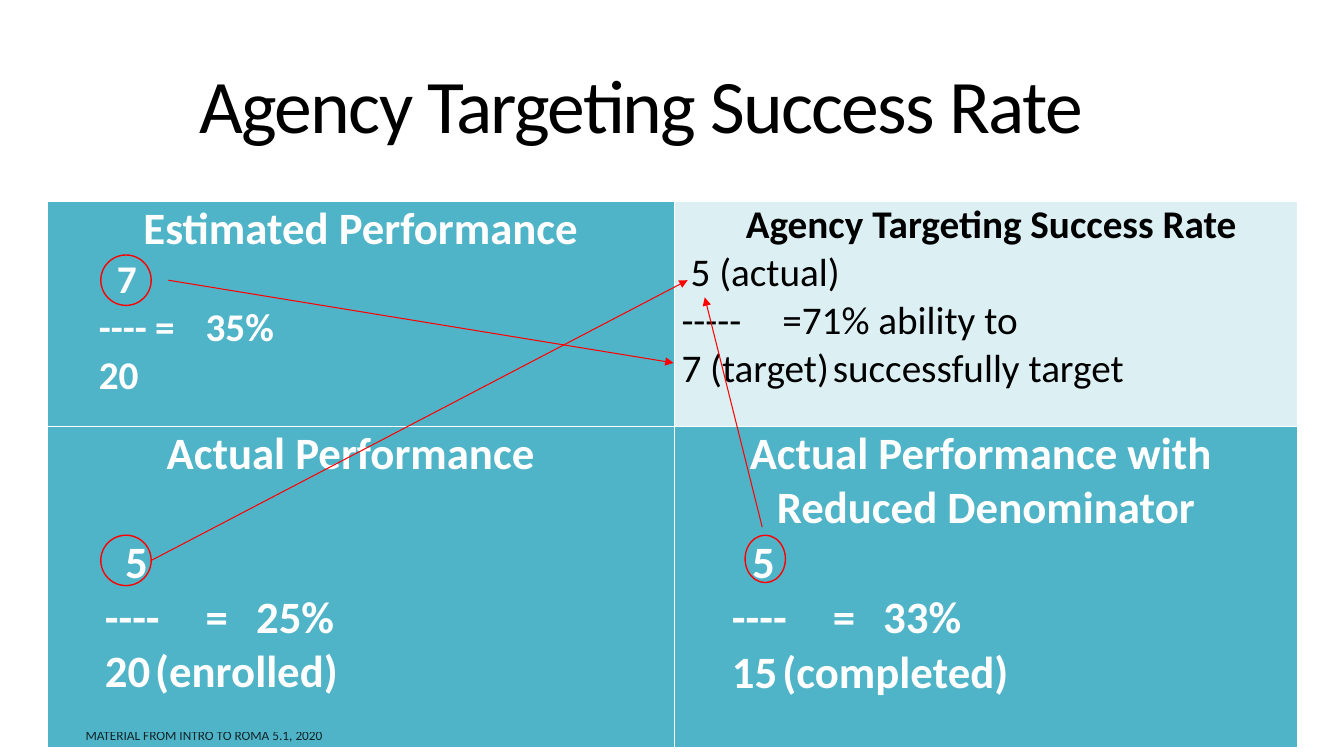
from dataclasses import dataclass
from typing import NamedTuple

from lxml.etree import SubElement
from pptx import Presentation
from pptx.dml.color import RGBColor as Rgb
from pptx.enum.shapes import MSO_CONNECTOR as Link, MSO_SHAPE as Shape
from pptx.enum.text import MSO_ANCHOR as Anchor, MSO_AUTO_SIZE as Fit, PP_ALIGN as Align
from pptx.oxml.ns import qn
from pptx.util import Pt


@dataclass(frozen=True)
class Theme:
    face: str = "Calibri"
    black: str = "000000"
    white: str = "FFFFFF"
    red: str = "FF0000"
    teal: str = "50B4C8"
    pale: str = "DCF0F4"
    title: float = 54
    large: float = 32
    mid: float = 28
    note: float = 9.5


class Box(NamedTuple):
    left: int
    top: int
    width: int
    height: int


class Line(NamedTuple):
    text: str
    size: float
    indent: int = 0
    tabs: tuple[int, ...] = ()
    bold: bool = True
    center: bool = False
    shift: int = 0
    before: float = 0


class Panel(NamedTuple):
    row: int
    col: int
    fill: str
    ink: str
    lines: list[Line]


class Arrow(NamedTuple):
    x1: int
    y1: int
    x2: int
    y2: int


THEME = Theme()
SCALE = 9144
WIDE, HIGH = 1333, 750
TITLE = Box(47, 19, 1178, 181)
TABLE = Box(47, 200, 1240, 542)
COLS = (622, 618)
ROWS = (223, 319)
NOTE = Box(75, 717, 550, 25)
BIG, MID = THEME.large, THEME.mid

PANELS = [
    Panel(0, 0, THEME.teal, THEME.white, [
        Line("Estimated Performance", BIG, center=True),
        Line("7", MID, 62),
        Line("----\t=\t35%", MID, 44, (127, 181)),
        Line("20", MID, 44),
    ]),
    Panel(0, 1, THEME.pale, THEME.black, [
        Line("Agency Targeting Success Rate", MID, center=True, shift=10),
        Line("5 (actual)", MID, 9, bold=False),
        Line("-----\t=71% ability to", MID, 0, (208,), False),
        Line("7 (target)\tsuccessfully target", MID, 0, (277,), False),
    ]),
    Panel(1, 0, THEME.teal, THEME.white, [
        Line("Actual Performance", BIG, center=True, shift=-20),
        Line("5", BIG, 70, before=39),
        Line("----\t=\t25%", BIG, 50, (145, 197)),
        Line("20\t(enrolled)", BIG, 50, (145,)),
    ]),
    Panel(1, 1, THEME.teal, THEME.white, [
        Line("Actual Performance with", BIG, center=True, shift=-10),
        Line("Reduced Denominator", BIG, center=True),
        Line("5", BIG, 70),
        Line("----\t=\t33%", BIG, 50, (145, 197)),
        Line("15\t(completed)", BIG, 50, (115,)),
    ]),
]
RINGS = [Box(100, 253, 50, 50), Box(100, 531, 50, 50), Box(739, 531, 40, 47)]
ARROWS = [
    Arrow(167, 278, 668, 360),
    Arrow(150, 556, 682, 278),
    Arrow(756, 523, 699, 295),
]


def px(n: int) -> int:
    return n * SCALE


def place(box: Box) -> list[int]:
    return [px(n) for n in box]


def style(para, size: float, ink: str, bold: bool = False) -> None:
    font = para.font
    font.name = THEME.face
    font.size = Pt(size)
    font.bold = bold
    font.color.rgb = Rgb.from_string(ink)


def write(para, line: Line, ink: str) -> None:
    para.add_run().text = line.text
    para.alignment = Align.CENTER if line.center else Align.LEFT
    if line.before:
        para.space_before = Pt(line.before)
    props = para._p.get_or_add_pPr()
    props.set("marL", str(px(max(line.shift, 0))))
    props.set("marR", str(px(max(-line.shift, 0))))
    props.set("indent", str(px(line.indent)))
    if line.tabs:
        stops = SubElement(props, qn("a:tabLst"))
        for pos in line.tabs:
            SubElement(stops, qn("a:tab"), pos=str(px(pos)), algn="l")
    style(para, line.size, ink, line.bold)


def add_title(slide) -> None:
    title = slide.shapes.title
    title.left, title.top, title.width, title.height = place(TITLE)
    frame = title.text_frame
    frame.auto_size = Fit.NONE
    frame.vertical_anchor = Anchor.MIDDLE
    para = frame.paragraphs[0]
    run = para.add_run()
    run.text = "Agency Targeting Success Rate"
    run._r.get_or_add_rPr().set("spc", "-120")
    para.alignment = Align.CENTER
    para.line_spacing = 0.85
    style(para, THEME.title, THEME.black)


def add_grid(slide) -> None:
    grid = slide.shapes.add_table(len(ROWS), len(COLS), *place(TABLE)).table
    grid.horz_banding = False
    for col, width in zip(grid.columns, COLS):
        col.width = px(width)
    for row, height in zip(grid.rows, ROWS):
        row.height = px(height)
    for panel in PANELS:
        cell = grid.cell(panel.row, panel.col)
        cell.fill.solid()
        cell.fill.fore_color.rgb = Rgb.from_string(panel.fill)
        cell.margin_left = cell.margin_right = px(7)
        cell.margin_top = cell.margin_bottom = 0
        frame = cell.text_frame
        for i, line in enumerate(panel.lines):
            para = frame.add_paragraph() if i else frame.paragraphs[0]
            write(para, line, panel.ink)


def add_ring(slide, box: Box) -> None:
    ring = slide.shapes.add_shape(Shape.FLOWCHART_CONNECTOR, *place(box))
    ring.shadow.inherit = False
    ring.fill.background()
    ring.line.color.rgb = Rgb.from_string(THEME.red)
    ring.line.width = Pt(1)


def add_arrow(slide, arrow: Arrow) -> None:
    link = slide.shapes.add_connector(Link.STRAIGHT, *[px(n) for n in arrow])
    link.line.color.rgb = Rgb.from_string(THEME.red)
    link.line.width = Pt(0.75)
    SubElement(link.line._get_or_add_ln(), qn("a:tailEnd"), type="triangle")
    SubElement(link._element.spPr, qn("a:effectLst"))


def add_note(slide) -> None:
    frame = slide.shapes.add_textbox(*place(NOTE)).text_frame
    frame.word_wrap = True
    frame.vertical_anchor = Anchor.MIDDLE
    para = frame.paragraphs[0]
    para.add_run().text = "MATERIAL FROM INTRO TO ROMA 5.1, 2020"
    style(para, THEME.note, THEME.black)
    for tint in para._p.iter(qn("a:srgbClr")):
        SubElement(tint, qn("a:alpha"), val="80000")


def main() -> None:
    deck = Presentation()
    deck.slide_width, deck.slide_height = px(WIDE), px(HIGH)
    slide = deck.slides.add_slide(deck.slide_layouts[5])
    add_title(slide)
    add_grid(slide)
    for ring, arrow in zip(RINGS, ARROWS):
        add_ring(slide, ring)
        add_arrow(slide, arrow)
    add_note(slide)
    deck.save("out.pptx")


if __name__ == "__main__":
    main()
